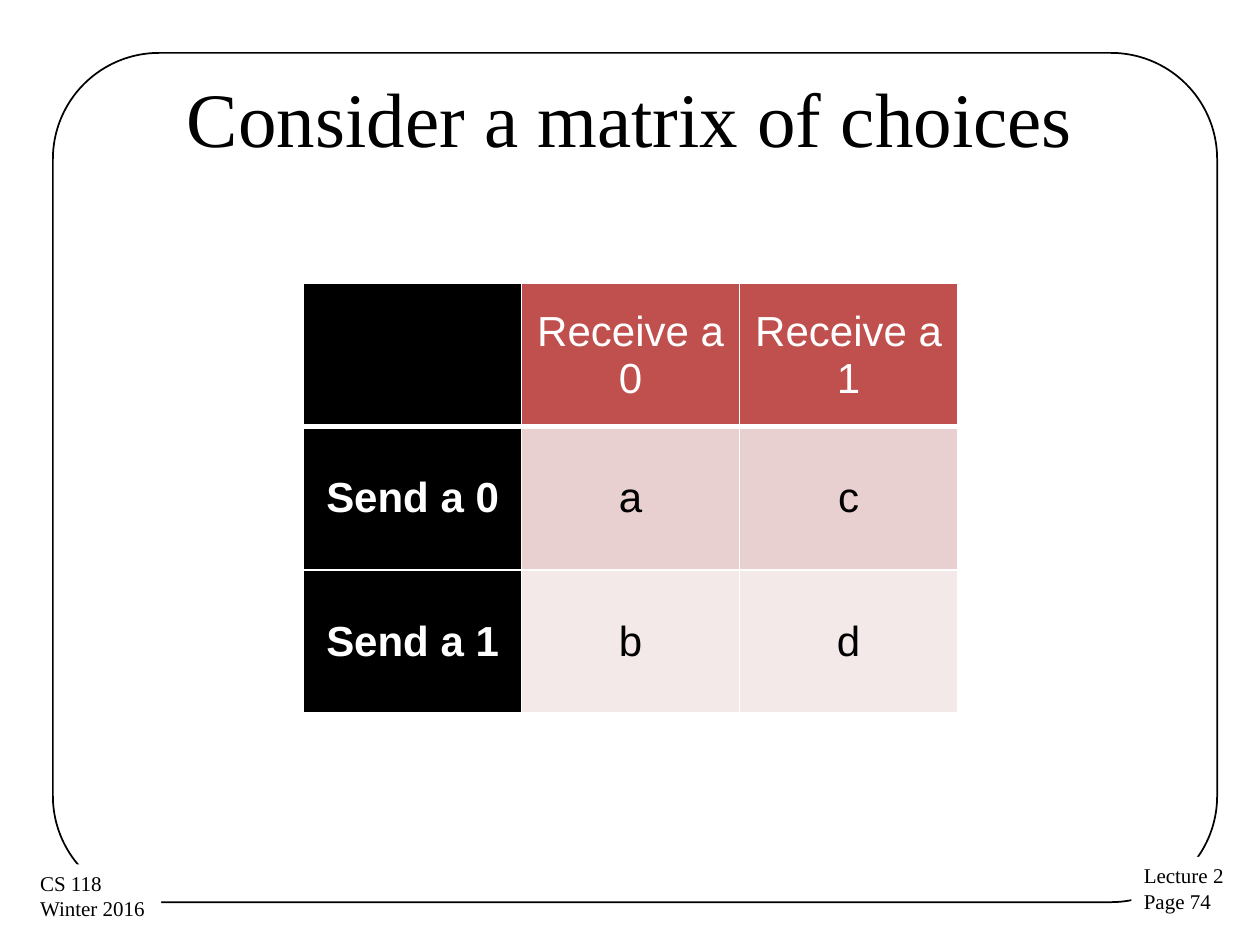
import pptx
import pptx.dml.color
import pptx.enum.shapes
import pptx.enum.text
import pptx.oxml.ns
import pptx.util
from dataclasses import dataclass
from lxml import etree

Inches = pptx.util.Inches
Pt = pptx.util.Pt
Align = pptx.enum.text.PP_ALIGN
Anchor = pptx.enum.text.MSO_ANCHOR
ShapeType = pptx.enum.shapes.MSO_SHAPE


@dataclass(frozen=True)
class Theme:
    serif: str = "Times New Roman"
    sans: str = "Arial"
    title_size: int = 44
    cell_size: int = 24
    label_size: int = 12
    black: str = "000000"
    white: str = "FFFFFF"
    header: str = "C0504D"
    bands: tuple = ("E8D0D0", "F4E9E9")


THEME = Theme()


def rgb(value):
    return pptx.dml.color.RGBColor.from_string(value)


def paint(target, color):
    target.fill.solid()
    target.fill.fore_color.rgb = rgb(color)


def add_run(paragraph, text, font, size, color, bold=False):
    run = paragraph.add_run()
    run.text = text
    run.font.name = font
    run.font.size = Pt(size)
    run.font.color.rgb = rgb(color)
    run.font.bold = bold


def add_frame(slide):
    frame = slide.shapes.add_shape(
        ShapeType.ROUNDED_RECTANGLE, Inches(0.42), Inches(0.42), Inches(9.24), Inches(6.74))
    frame.adjustments[0] = 0.125
    frame.shadow.inherit = False
    frame.fill.background()
    frame.line.color.rgb = rgb(THEME.black)
    frame.line.width = Pt(1)


def add_corner_label(slide, left, top, width, lines):
    """White box that interrupts the frame behind two short lines."""
    label = slide.shapes.add_textbox(Inches(left), Inches(top), Inches(width), Inches(0.51))
    paint(label, THEME.white)
    text_frame = label.text_frame
    text_frame.word_wrap = False
    text_frame.auto_size = pptx.enum.text.MSO_AUTO_SIZE.SHAPE_TO_FIT_TEXT
    for index, line in enumerate(lines):
        paragraph = text_frame.add_paragraph() if index else text_frame.paragraphs[0]
        paragraph.alignment = Align.LEFT
        add_run(paragraph, line, THEME.serif, THEME.label_size, THEME.black)


def add_title(slide, text):
    title = slide.shapes.add_textbox(Inches(0.5), Inches(0.3), Inches(9), Inches(1.25))
    text_frame = title.text_frame
    text_frame.word_wrap = True
    text_frame.vertical_anchor = Anchor.MIDDLE
    paragraph = text_frame.paragraphs[0]
    paragraph.alignment = Align.CENTER
    add_run(paragraph, text, THEME.serif, THEME.title_size, THEME.black)


def set_borders(cell, bottom_width):
    properties = cell._tc.get_or_add_tcPr()
    widths = {"a:lnL": 1, "a:lnR": 1, "a:lnT": 1, "a:lnB": bottom_width}
    for tag, width in widths.items():
        line = etree.SubElement(properties, pptx.oxml.ns.qn(tag), w=str(Pt(width)))
        fill = etree.SubElement(line, pptx.oxml.ns.qn("a:solidFill"))
        etree.SubElement(fill, pptx.oxml.ns.qn("a:srgbClr"), val=THEME.white)


def cell_colors(row, column):
    """Fill and text colour by position in the matrix."""
    if column == 0:
        return THEME.black, THEME.white
    if row == 0:
        return THEME.header, THEME.white
    return THEME.bands[(row - 1) % 2], THEME.black


def add_matrix(slide, rows):
    table = slide.shapes.add_table(
        len(rows), len(rows[0]), Inches(2.41), Inches(2.25), Inches(5.19), Inches(3.41)).table
    for row_index, texts in enumerate(rows):
        for column_index, text in enumerate(texts):
            cell = table.cell(row_index, column_index)
            fill, color = cell_colors(row_index, column_index)
            set_borders(cell, 3 if row_index == 0 else 1)
            paint(cell, fill)
            cell.vertical_anchor = Anchor.MIDDLE
            cell.margin_left = cell.margin_right = Inches(0.08)
            cell.margin_top = cell.margin_bottom = Inches(0.04)
            paragraph = cell.text_frame.paragraphs[0]
            paragraph.alignment = Align.CENTER
            if text:
                add_run(paragraph, text, THEME.sans, THEME.cell_size, color,
                        bold=column_index == 0)


def main():
    presentation = pptx.Presentation()
    presentation.slide_width = Inches(10)
    presentation.slide_height = Inches(7.5)
    slide = presentation.slides.add_slide(presentation.slide_layouts[6])

    # Frame and corner labels
    add_frame(slide)
    add_corner_label(slide, 8.98, 6.8, 0.84, ["Lecture 2", "Page 74"])
    add_corner_label(slide, 0.22, 6.86, 1.06, ["CS 118", "Winter 2016"])

    # Title and matrix
    add_title(slide, "Consider a matrix of choices")
    add_matrix(slide, [
        ["", "Receive a 0", "Receive a 1"],
        ["Send a 0", "a", "c"],
        ["Send a 1", "b", "d"],
    ])

    presentation.save("out.pptx")


if __name__ == "__main__":
    main()
